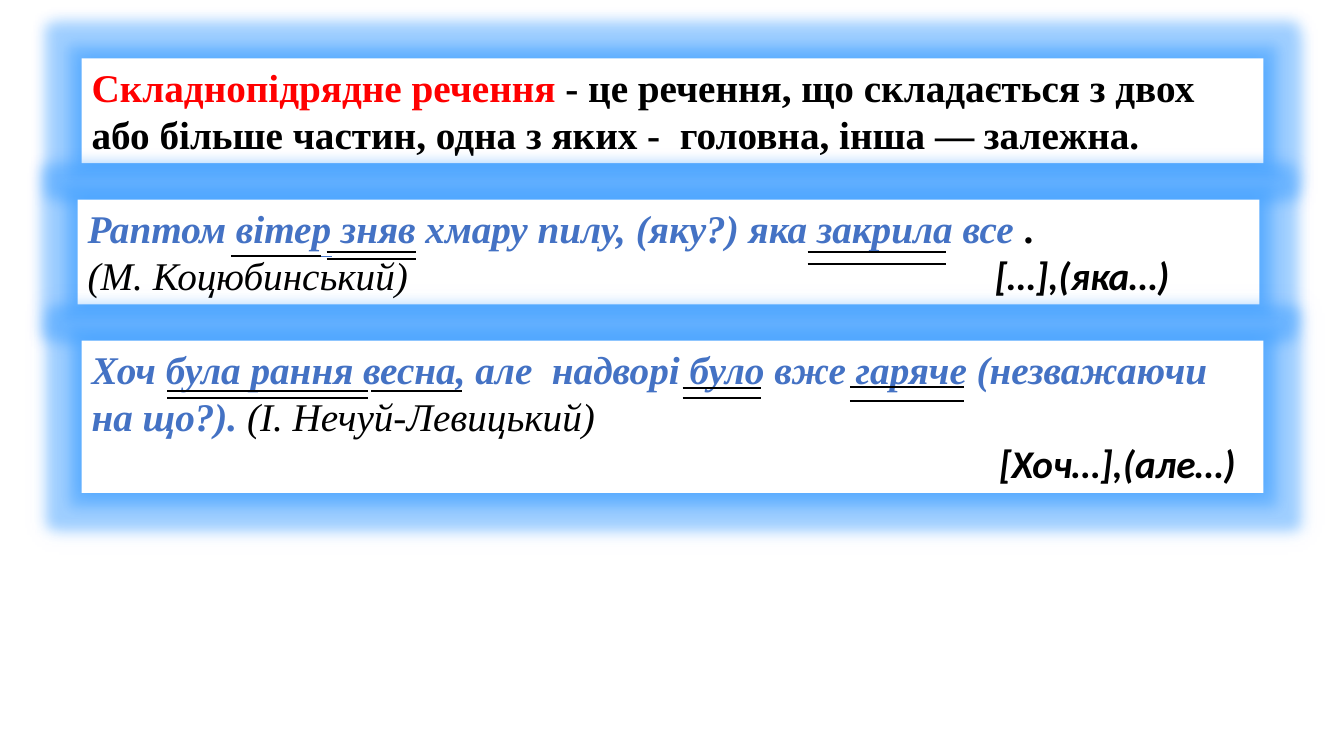
from lxml import etree
from pptx import Presentation
from pptx.dml.color import RGBColor
from pptx.enum.shapes import MSO_CONNECTOR
from pptx.enum.text import MSO_AUTO_SIZE
from pptx.oxml import parse_xml
from pptx.oxml.ns import nsdecls, qn
from pptx.util import Inches, Pt

STRAIGHT = MSO_CONNECTOR.STRAIGHT
GROW = MSO_AUTO_SIZE.SHAPE_TO_FIT_TEXT
BLACK = RGBColor(0x00, 0x00, 0x00)
WHITE = RGBColor(0xFF, 0xFF, 0xFF)
RED = RGBColor(0xFF, 0x00, 0x00)
BLUE = RGBColor(0x44, 0x72, 0xC4)
GLOW = RGBColor(0x33, 0x99, 0xFF)
SERIF, SANS = "Times New Roman", "Calibri"
BOX_WIDTH = 11.72
SCHEME_TAB = 9.0

# Run styles: font, colour, bold, italic
TERM = (SERIF, RED, True, False)
PLAIN = (SERIF, BLACK, True, False)
EXAMPLE = (SERIF, BLUE, True, True)
AUTHOR = (SERIF, BLACK, False, True)
SCHEME = (SANS, BLACK, True, True)


def add_glow(sp):
    """Soft halo with a denser inner rim."""
    sp._element.spPr.append(parse_xml(
        f'<a:effectLst {nsdecls("a")}>'
        f'<a:glow rad="{Inches(0.25)}"><a:srgbClr val="{GLOW}">'
        '<a:alpha val="40000"/></a:srgbClr></a:glow>'
        f'<a:outerShdw blurRad="{Inches(0.15)}" dist="0" algn="ctr" rotWithShape="0">'
        f'<a:srgbClr val="{GLOW}"><a:alpha val="60000"/></a:srgbClr></a:outerShdw>'
        '</a:effectLst>'))


def add_scheme_tab(p):
    tabs = etree.SubElement(p._p.get_or_add_pPr(), qn("a:tabLst"))
    etree.SubElement(tabs, qn("a:tab"), pos=str(Inches(SCHEME_TAB)), algn="l")


def add_box(s, left, top, height, paragraphs):
    sp = s.shapes.add_textbox(Inches(left), Inches(top), Inches(BOX_WIDTH), Inches(height))
    sp.fill.solid()
    sp.fill.fore_color.rgb = WHITE
    add_glow(sp)
    tf = sp.text_frame
    tf.word_wrap = True
    tf.auto_size = GROW
    for i, runs in enumerate(paragraphs):
        p = tf.add_paragraph() if i else tf.paragraphs[0]
        if any(style is SCHEME for _, style in runs):
            add_scheme_tab(p)
        for text, (font, colour, bold, italic) in runs:
            r = p.add_run()
            r.text = text
            r.font.name, r.font.size = font, Pt(28)
            r.font.bold, r.font.italic = bold, italic
            r.font.color.rgb = colour


def add_underlines(s, left, top, marks):
    """Each mark: start and width, then the heights of its lines."""
    for start, width, heights, colour, weight in marks:
        x = Inches(left + start)
        for height in heights:
            y = Inches(top + height)
            line = s.shapes.add_connector(STRAIGHT, x, y, x + Inches(width), y)
            line.line.color.rgb = colour
            line.line.width = Pt(weight)
            etree.SubElement(line._element.spPr, qn("a:effectLst"))


def add_definition(s, left, top):
    add_box(s, left, top, 1.04, [[
        ("Складнопідрядне речення ", TERM),
        ("- це речення, що складається з двох або більше частин, "
         "одна з яких -  головна, інша — залежна.", PLAIN),
    ]])


def add_wind_example(s, left, top):
    add_box(s, left, top, 1.04, [
        [("Раптом вітер зняв хмару пилу, (яку?) яка закрила все ", EXAMPLE), (".", PLAIN)],
        [("(М. Коцюбинський)", AUTHOR), ("\t[…],(яка…)", SCHEME)],
    ])
    add_underlines(s, left, top, [
        (2.06, 0.46, [0.56], BLUE, 0.5),
        (1.52, 0.89, [0.56], BLACK, 1.5),
        (2.47, 0.89, [0.52, 0.59], BLACK, 1.5),
        (7.24, 1.37, [0.52, 0.64], BLACK, 1.5),
    ])


def add_spring_example(s, left, top):
    add_box(s, left, top, 1.51, [
        [("Хоч була рання весна, але  надворі було вже гаряче (незважаючи на що?). ", EXAMPLE),
         ("(І. Нечуй-Левицький)", AUTHOR)],
        [("\t[Хоч…],(але…)", SCHEME)],
    ])
    add_underlines(s, left, top, [
        (2.87, 0.9, [0.5], BLACK, 1.5),
        (0.85, 1.99, [0.5, 0.57], BLACK, 1.5),
        (5.96, 0.78, [0.47, 0.57], BLACK, 1.5),
        (7.62, 1.13, [0.46, 0.6], BLACK, 1.5),
    ])


def main():
    prs = Presentation()
    prs.slide_width, prs.slide_height = Inches(13.33), Inches(7.5)
    s = prs.slides.add_slide(prs.slide_layouts[6])
    add_definition(s, 0.81, 0.58)
    add_wind_example(s, 0.77, 1.98)
    add_spring_example(s, 0.81, 3.38)
    prs.save("out.pptx")


if __name__ == "__main__":
    main()
